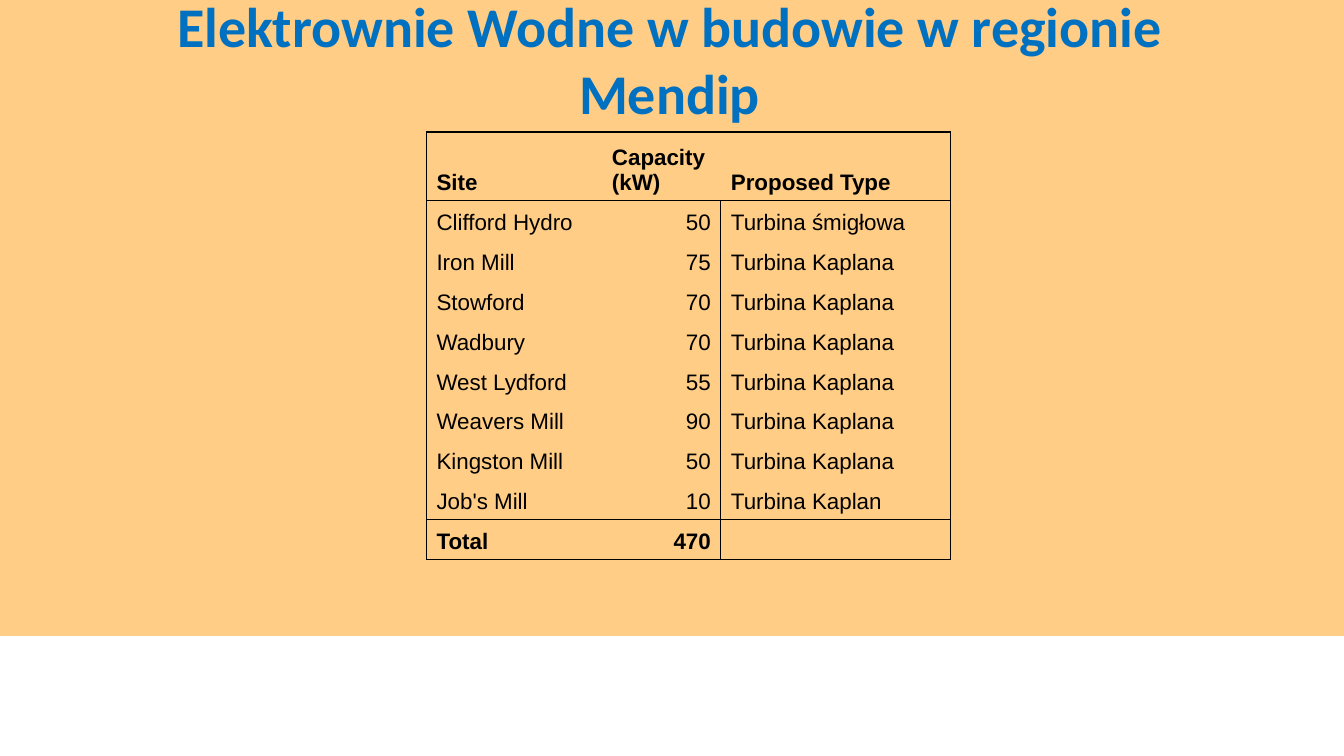
import pptx
import pptx.dml.color
import pptx.enum.shapes
import pptx.enum.text
import pptx.oxml
import pptx.oxml.ns
import pptx.util
from dataclasses import dataclass
from lxml import etree

Inches = pptx.util.Inches
ALIGN = pptx.enum.text.PP_ALIGN
ANCHOR = pptx.enum.text.MSO_ANCHOR


@dataclass(frozen=True)
class Theme:
    band: str = "FFAA2D"
    alpha: int = 58
    title: str = "0070C0"
    ink: str = "000000"
    head: str = "Calibri"
    body: str = "Arial"
    big: int = 40
    small: int = 16
    rule: int = 1


THEME = Theme()
HEADS = ("Site", "Capacity (kW)", "Proposed Type")
SITES = (
    ("Clifford Hydro", 50, "Turbina śmigłowa"),
    ("Iron Mill", 75, "Turbina Kaplana"),
    ("Stowford", 70, "Turbina Kaplana"),
    ("Wadbury", 70, "Turbina Kaplana"),
    ("West Lydford", 55, "Turbina Kaplana"),
    ("Weavers Mill", 90, "Turbina Kaplana"),
    ("Kingston Mill", 50, "Turbina Kaplana"),
    ("Job's Mill", 10, "Turbina Kaplan"),
)
TOTAL = ("Total", sum(power for _, power, _ in SITES), "")
WIDTHS = (1.74, 1.18, 2.28)
HEAD = 0.68


def rgb(code):
    return pptx.dml.color.RGBColor.from_string(code)


def write(para, text, face, size, code, bold):
    run = para.add_run()
    run.text = text
    run.font.name = face
    run.font.size = pptx.util.Pt(size)
    run.font.bold = bold
    run.font.color.rgb = rgb(code)


def add_band(slide, box):
    """Lay the translucent band behind everything else."""
    band = slide.shapes.add_shape(
        pptx.enum.shapes.MSO_SHAPE.RECTANGLE, *map(Inches, box))
    band.shadow.inherit = False
    band.line.fill.background()
    band.fill.solid()
    band.fill.fore_color.rgb = rgb(THEME.band)
    tint = band.element.find(".//" + pptx.oxml.ns.qn("a:srgbClr"))
    alpha = etree.SubElement(tint, pptx.oxml.ns.qn("a:alpha"))
    alpha.set("val", str(THEME.alpha * 1000))
    band.element.getparent().insert(2, band.element)


def add_title(slide, box, text):
    title = slide.shapes.title
    title.left, title.top, title.width, title.height = map(Inches, box)
    frame = title.text_frame
    frame.word_wrap = True
    frame.auto_size = pptx.enum.text.MSO_AUTO_SIZE.NONE
    frame.vertical_anchor = ANCHOR.MIDDLE
    para = frame.paragraphs[0]
    para.alignment = ALIGN.CENTER
    write(para, text, THEME.head, THEME.big, THEME.title, True)


def set_edges(cell, drawn):
    """Rule the sides named in drawn and clear the other ones."""
    props = cell._tc.get_or_add_tcPr()
    for side in "LRTB":
        line = etree.SubElement(props, pptx.oxml.ns.qn("a:ln" + side))
        if side in drawn:
            line.set("w", str(pptx.util.Pt(THEME.rule)))
            fill = etree.SubElement(line, pptx.oxml.ns.qn("a:solidFill"))
            tint = etree.SubElement(fill, pptx.oxml.ns.qn("a:srgbClr"))
            tint.set("val", THEME.ink)
        else:
            etree.SubElement(line, pptx.oxml.ns.qn("a:noFill"))


def edges(row, col, last):
    """Frame the table, its head, its total row and its last column."""
    sides = ""
    if col == 0 or (col == 2 and row > 0):
        sides += "L"
    if col == 2 or (col == 1 and row > 0):
        sides += "R"
    if row in (0, 1, last):
        sides += "T"
    if row in (0, last - 1, last):
        sides += "B"
    return sides


def add_sites(slide, box):
    rows = (HEADS, *SITES, TOTAL)
    last = len(rows) - 1
    table = slide.shapes.add_table(
        len(rows), len(HEADS), *map(Inches, box)).table
    table.first_row = table.horz_banding = False
    for col, width in zip(table.columns, WIDTHS):
        col.width = Inches(width)
    for r, values in enumerate(rows):
        step = HEAD if r == 0 else (box[3] - HEAD) / last
        table.rows[r].height = Inches(step)
        for c, value in enumerate(values):
            cell = table.cell(r, c)
            set_edges(cell, edges(r, c, last))
            cell.fill.background()
            cell.vertical_anchor = ANCHOR.BOTTOM
            cell.margin_top = 0
            para = cell.text_frame.paragraphs[0]
            if c == 1 and r > 0:
                para.alignment = ALIGN.RIGHT
            if value != "":
                write(para, str(value), THEME.body, THEME.small,
                      THEME.ink, r in (0, last))


def main():
    deck = pptx.Presentation()
    deck.slide_width, deck.slide_height = Inches(13.33), Inches(7.5)
    slide = deck.slides.add_slide(deck.slide_layouts[5])
    add_band(slide, (0, 0, 13.33, 6.31))
    add_sites(slide, (4.23, 1.31, sum(WIDTHS), 4.24))
    add_title(slide, (0.89, 0, 11.5, 1.16),
              "Elektrownie Wodne w budowie w regionie Mendip")
    deck.save("out.pptx")


if __name__ == "__main__":
    main()
